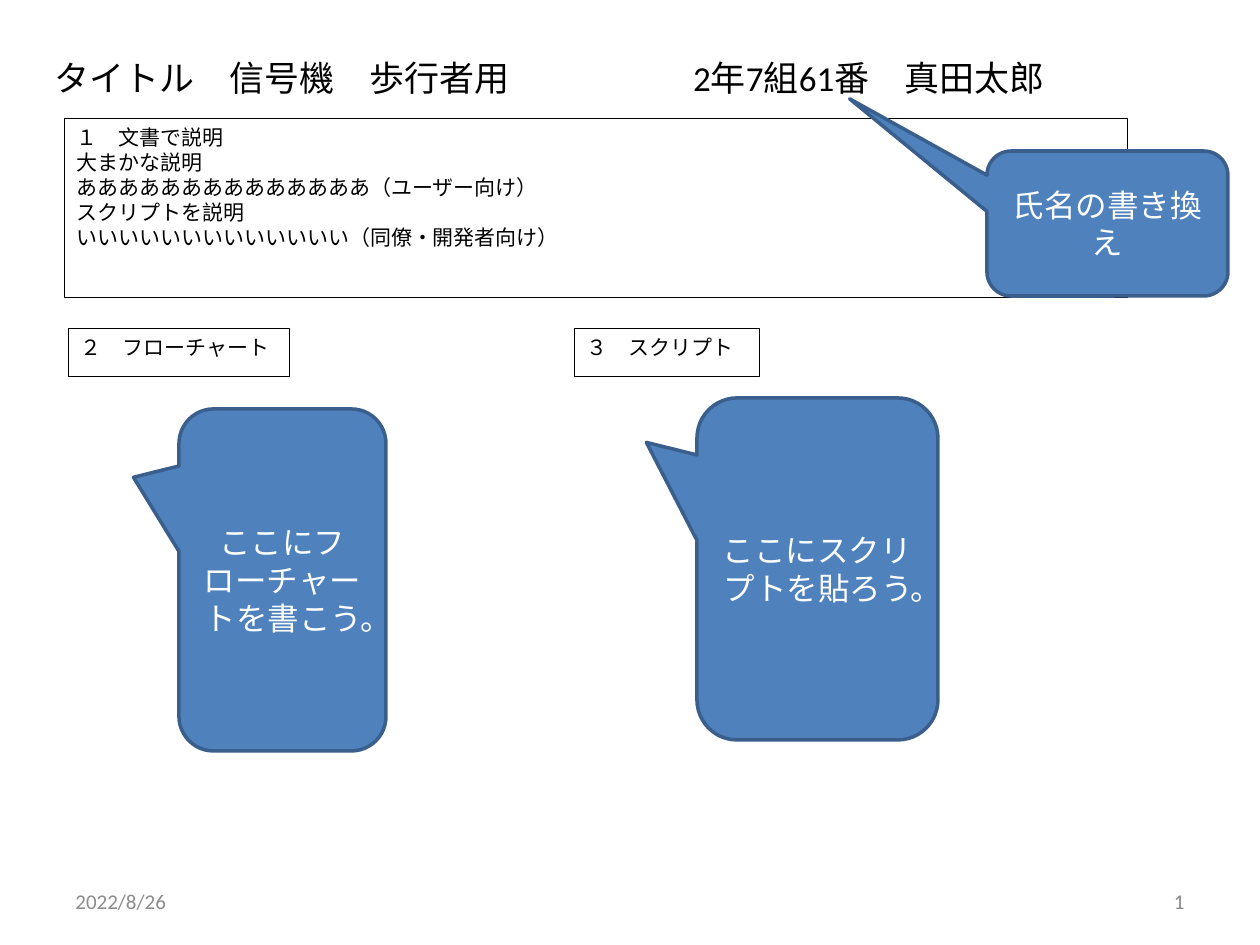
import dataclasses

import pptx
import pptx.dml.color
import pptx.enum.shapes
import pptx.enum.text
import pptx.util

SHAPE = pptx.enum.shapes.MSO_SHAPE
ALIGN = pptx.enum.text.PP_ALIGN
ANCHOR = pptx.enum.text.MSO_ANCHOR


@dataclasses.dataclass(frozen=True)
class Theme:
    font: str = "Calibri"
    ink: str = "000000"
    paper: str = "FFFFFF"
    date: str = "8C8C8C"
    number: str = "898989"
    bubble: str = "4F81BD"
    edge: str = "3A5F8C"
    title: int = 20
    call: int = 18
    body: int = 12
    thin: float = 0.25
    thick: float = 2


THEME = Theme()


def px(count):
    return pptx.util.Emu(round(count * 914400 / 126))


def rgb(code):
    return pptx.dml.color.RGBColor.from_string(code)


def write(shape, lines, size, color, align=ALIGN.LEFT, anchor=ANCHOR.MIDDLE):
    frame = shape.text_frame
    frame.word_wrap = True
    frame.vertical_anchor = anchor
    frame.text = "\n".join(lines)
    for para in frame.paragraphs:
        para.alignment = align
        para.font.name = THEME.font
        para.font.size = pptx.util.Pt(size)
        para.font.color.rgb = rgb(color)


def add_label(slide, box, text, size, color, align):
    label = slide.shapes.add_textbox(*map(px, box))
    write(label, [text], size, color, align)


def add_form(slide, kind, box, fill, line, width):
    form = slide.shapes.add_shape(kind, *map(px, box))
    form.shadow.inherit = False
    form.fill.solid()
    form.fill.fore_color.rgb = rgb(fill)
    form.line.color.rgb = rgb(line)
    form.line.width = pptx.util.Pt(width)
    return form


def add_panel(slide, box, *lines):
    panel = add_form(slide, SHAPE.RECTANGLE, box,
                     THEME.paper, THEME.ink, THEME.thin)
    write(panel, lines, THEME.body, THEME.ink, anchor=ANCHOR.TOP)


def add_bubble(slide, box, tip, text):
    """Add a callout; tip is its point, as shares of its size from its centre."""
    bubble = add_form(slide, SHAPE.ROUNDED_RECTANGULAR_CALLOUT, box,
                      THEME.bubble, THEME.edge, THEME.thick)
    bubble.adjustments[0], bubble.adjustments[1] = tip
    write(bubble, [text], THEME.call, THEME.paper, ALIGN.CENTER)


def main():
    deck = pptx.Presentation()
    deck.slide_width, deck.slide_height = px(1260), px(945)
    slide = deck.slides.add_slide(deck.slide_layouts[6])

    for left, text in ((23, "タイトル　信号機　歩行者用"),
                       (610, "2年7組61番　真田太郎")):
        add_label(slide, (left, 39, 518, 77), text,
                  THEME.title, THEME.ink, ALIGN.CENTER)
    for left, text, color, align in (
            (63, "2022/8/26", THEME.date, ALIGN.LEFT),
            (903, "1", THEME.number, ALIGN.RIGHT)):
        add_label(slide, (left, 876, 294, 50), text, THEME.body, color, align)

    add_panel(slide, (64, 118, 1063, 179),
              "１　文書で説明",
              "大まかな説明",
              "ああああああああああああああ（ユーザー向け）",
              "スクリプトを説明",
              "いいいいいいいいいいいいい（同僚・開発者向け）")
    add_panel(slide, (574, 328, 185, 48), "３　スクリプト")
    add_panel(slide, (68, 328, 221, 48), "２　フローチャート")

    add_bubble(slide, (179, 409, 207, 342), (-0.72, -0.3),
               "ここにフローチャートを書こう。")
    add_bubble(slide, (697, 398, 241, 342), (-0.71, -0.37),
               "ここにスクリプトを貼ろう。")
    add_bubble(slide, (987, 151, 241, 145), (-1.07, -0.86),
               "氏名の書き換え")

    deck.save("out.pptx")


if __name__ == "__main__":
    main()
